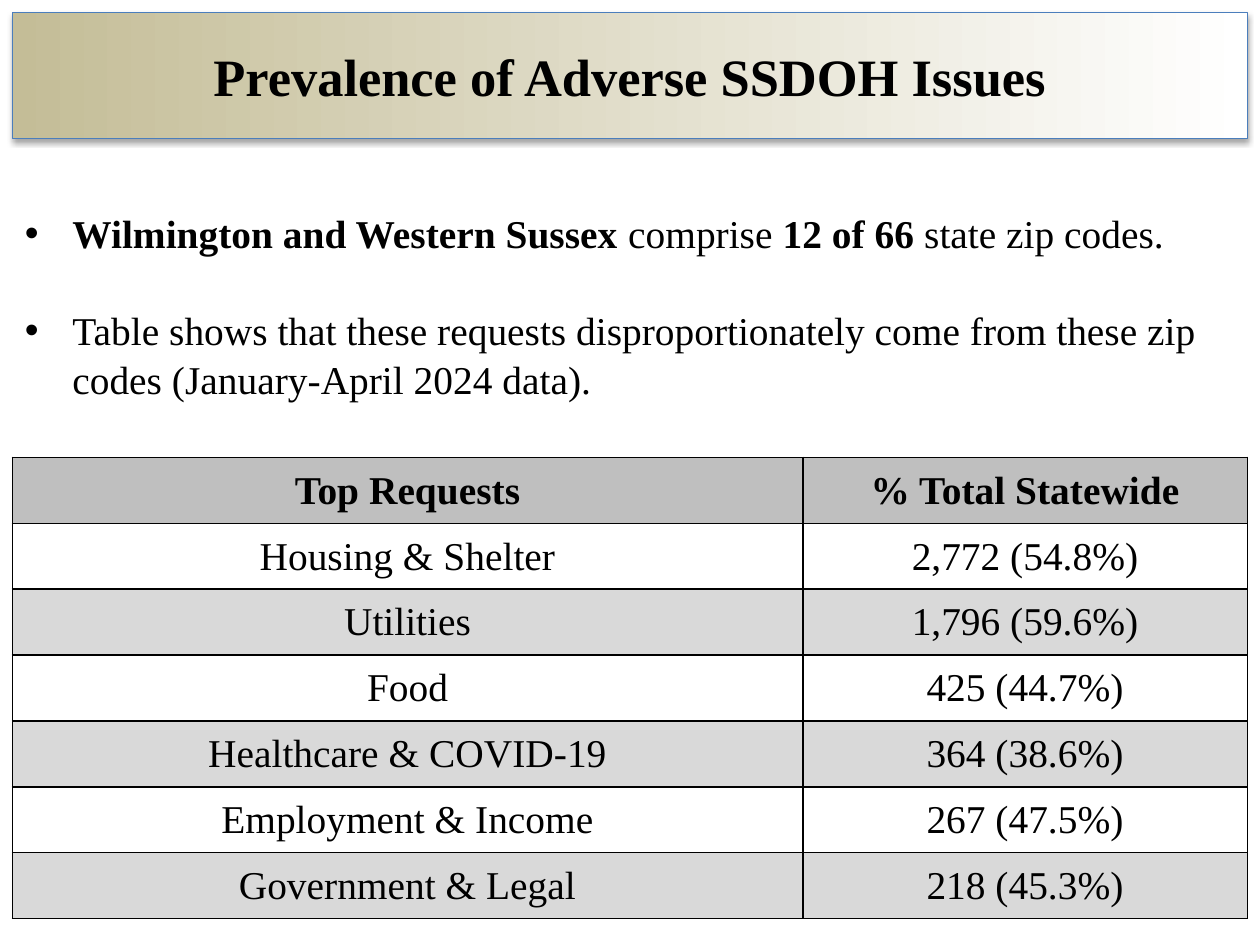
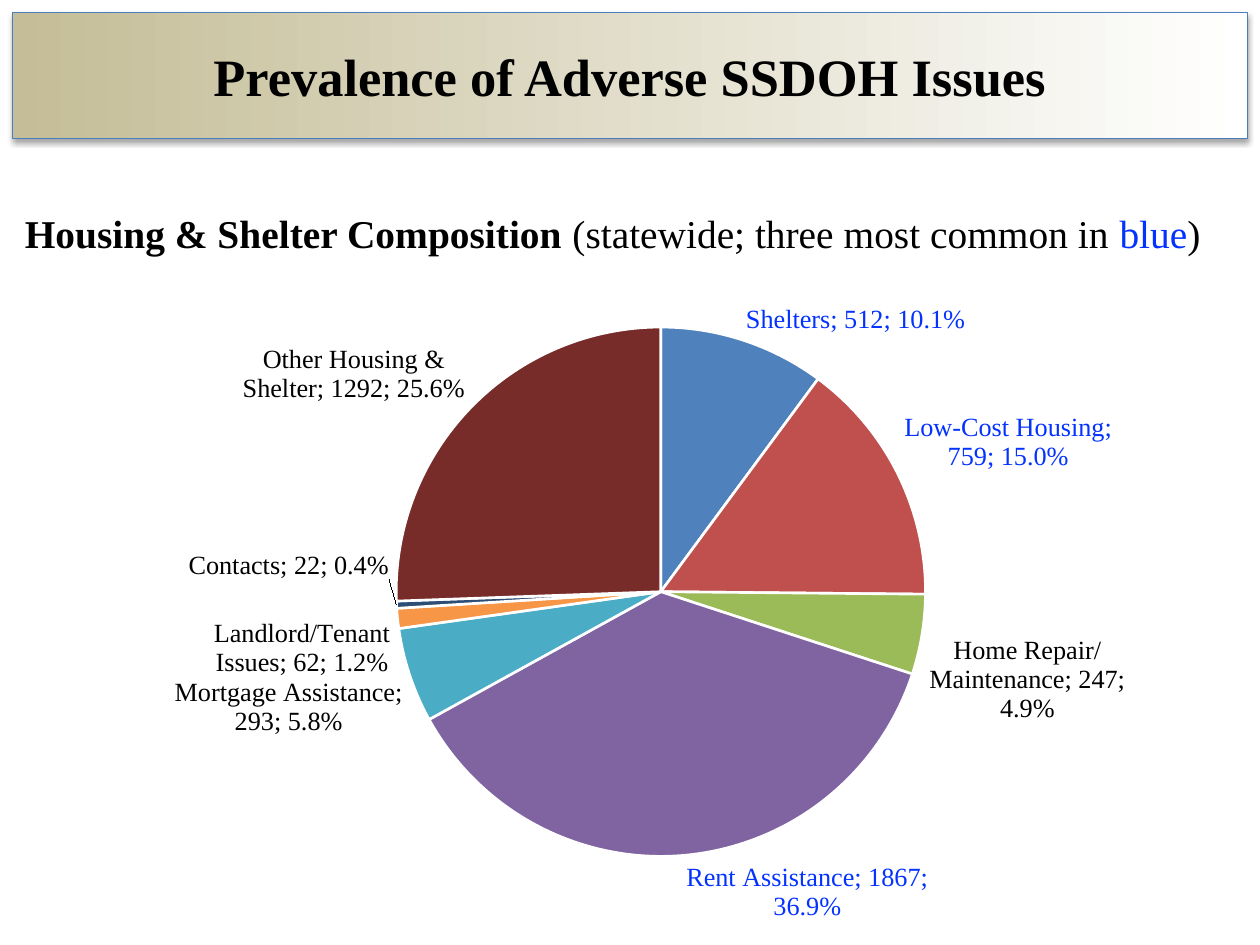
from lxml import etree
from pptx import Presentation
from pptx.chart.data import CategoryChartData
from pptx.dml.color import RGBColor
from pptx.enum.chart import XL_CHART_TYPE, XL_LABEL_POSITION
from pptx.enum.shapes import MSO_SHAPE
from pptx.enum.text import MSO_ANCHOR, PP_ALIGN
from pptx.oxml import parse_xml
from pptx.oxml.ns import nsdecls, qn
from pptx.util import Cm, Pt

RECTANGLE = MSO_SHAPE.RECTANGLE
PIE = XL_CHART_TYPE.PIE
OUTSIDE_END = XL_LABEL_POSITION.OUTSIDE_END
MIDDLE = MSO_ANCHOR.MIDDLE
CENTER = PP_ALIGN.CENTER
LEFT = PP_ALIGN.LEFT

FONT = "Times New Roman"
BLACK, WHITE, BLUE = "000000", "FFFFFF", "0432FF"
SAND, BAND_LINE = "C4BD97", "4B7EBC"
HEADER_GREY, STRIPE_GREY = "BFBFBF", "D9D9D9"
TITLE = "Prevalence of Adverse SSDOH Issues"
TITLE_SIZE, BODY_SIZE, LABEL_SIZE = 30, 22.5, 15
PERCENT_FORMAT = "0.0%"

MARGIN, WIDTH = 0.25, 24.9
BAND_BOX = (MARGIN, MARGIN, WIDTH, 2.54)
BULLETS_BOX = (MARGIN, 4.06, WIDTH, 4.6)
HEADING_BOX = (MARGIN, 4.06, WIDTH, 1.3)
REQUESTS_BOX = (MARGIN, 9.22, WIDTH, 9.3)
HOUSING_BOX = (MARGIN, 5.66, WIDTH, 13.34)

BULLETS = [
    [("Wilmington and Western Sussex", {"bold": True}), (" comprise ", {}),
     ("12 of 66 ", {"bold": True}), ("state zip codes.", {})],
    [("Table shows that these requests disproportionately come from these zip "
      "codes (January-April 2024 data).", {})],
]
HEADING = [
    [("Housing & Shelter Composition ", {"bold": True}),
     ("(statewide; three most common in ", {}), ("blue", {"color": BLUE}), (")", {})],
]
REQUESTS = [
    ("Top Requests", "% Total Statewide"),
    ("Housing & Shelter", "2,772 (54.8%)"),
    ("Utilities", "1,796 (59.6%)"),
    ("Food", "425 (44.7%)"),
    ("Healthcare & COVID-19", "364 (38.6%)"),
    ("Employment & Income", "267 (47.5%)"),
    ("Government & Legal", "218 (45.3%)"),
]
REQUEST_SHARE = 0.64
HOUSING = [
    ("Shelters", 512, "4F81BD"),
    ("Low-Cost Housing", 759, "C0504D"),
    ("Home Repair/Maintenance", 247, "9BBB59"),
    ("Rent Assistance", 1867, "8064A2"),
    ("Mortgage Assistance", 293, "4BACC6"),
    ("Landlord/Tenant Issues", 62, "F79646"),
    ("Contacts", 22, "2C4D75"),
    ("Other Housing & Shelter", 1292, "772C2A"),
]
MOST_COMMON = ("Shelters", "Low-Cost Housing", "Rent Assistance")
RAISED_LABEL = "Contacts"


def rgb(value):
    return RGBColor.from_string(value)


def lengths(box):
    return [Cm(value) for value in box]


def style_font(font, size, color=BLACK, bold=False):
    font.name = FONT
    font.size = Pt(size)
    font.bold = bold
    font.color.rgb = rgb(color)


def write(frame, paragraphs, size=BODY_SIZE, color=BLACK, bold=False,
          align=LEFT, spacing=1.0, gap=0, bullet_indent=0):
    frame.word_wrap = True
    for index, pieces in enumerate(paragraphs):
        paragraph = frame.add_paragraph() if index else frame.paragraphs[0]
        paragraph.alignment = align
        paragraph.line_spacing = spacing
        paragraph.space_before = Pt(gap if index else 0)
        if bullet_indent:
            add_bullet(paragraph, bullet_indent)
        for text, changes in pieces:
            run = paragraph.add_run()
            run.text = text
            style_font(run.font, **{"size": size, "color": color, "bold": bold, **changes})


def add_bullet(paragraph, indent):
    properties = paragraph._p.get_or_add_pPr()
    properties.set("marL", str(Cm(indent)))
    properties.set("indent", str(-Cm(indent)))
    etree.SubElement(properties, qn("a:buFont")).set("typeface", "Arial")
    etree.SubElement(properties, qn("a:buChar")).set("char", "•")


def add_title_band(slide, box):
    band = slide.shapes.add_shape(RECTANGLE, *lengths(box))
    band.fill.gradient()
    band.fill.gradient_angle = 0
    for stop, color in zip(band.fill.gradient_stops, (SAND, WHITE)):
        stop.color.rgb = rgb(color)
    band.line.color.rgb = rgb(BAND_LINE)
    band.line.width = Pt(0.75)
    band.shadow.inherit = False
    band._element.spPr.find(qn("a:effectLst")).append(parse_xml(
        f'<a:outerShdw {nsdecls("a")} blurRad="{Pt(3.1)}" dist="{Pt(1.8)}" '
        f'dir="5400000" rotWithShape="0"><a:srgbClr val="{BLACK}">'
        '<a:alpha val="35000"/></a:srgbClr></a:outerShdw>'))
    band.text_frame.vertical_anchor = MIDDLE
    write(band.text_frame, [[(TITLE, {})]], size=TITLE_SIZE, bold=True, align=CENTER)


def add_body(slide, box, paragraphs, **text_format):
    body = slide.shapes.add_textbox(*lengths(box))
    write(body.text_frame, paragraphs, spacing=1.04, **text_format)


def add_cell_borders(cell):
    properties = cell._tc.get_or_add_tcPr()
    for position, side in enumerate(("lnL", "lnR", "lnT", "lnB")):
        properties.insert(position, parse_xml(
            f'<a:{side} {nsdecls("a")} w="{Pt(1)}"><a:solidFill>'
            f'<a:srgbClr val="{BLACK}"/></a:solidFill></a:{side}>'))


def add_requests_table(slide, box):
    table = slide.shapes.add_table(len(REQUESTS), 2, *lengths(box)).table
    for column, share in zip(table.columns, (REQUEST_SHARE, 1 - REQUEST_SHARE)):
        column.width = Cm(box[2] * share)
    for row, texts in enumerate(REQUESTS):
        table.rows[row].height = Cm(box[3] / len(REQUESTS))
        color = HEADER_GREY if row == 0 else (STRIPE_GREY, WHITE)[row % 2]
        for column, text in enumerate(texts):
            cell = table.cell(row, column)
            cell.fill.solid()
            cell.fill.fore_color.rgb = rgb(color)
            cell.vertical_anchor = MIDDLE
            cell.margin_left = cell.margin_right = cell.margin_top = Cm(0.02)
            cell.margin_bottom = 0
            add_cell_borders(cell)
            write(cell.text_frame, [[(text, {})]], bold=row == 0, align=CENTER)


def manual_layout(x, y, size=None):
    edges = {"xMode": "edge", "yMode": "edge"} if size else {}
    values = {**edges, "x": x, "y": y}
    if size:
        values.update(w=size[0], h=size[1])
    target = '<c:layoutTarget val="inner"/>' if size else ""
    parts = "".join(f'<c:{key} val="{value}"/>' for key, value in values.items())
    return parse_xml(f'<c:layout {nsdecls("c")}><c:manualLayout>{target}{parts}'
                     '</c:manualLayout></c:layout>')


def complete_point_labels(chart, names):
    for label in chart.element.xpath(".//c:dLbl"):
        name = names[int(label.find(qn("c:idx")).get("val"))]
        label.insert(1, parse_xml(
            f'<c:numFmt {nsdecls("c")} formatCode="{PERCENT_FORMAT}" sourceLinked="0"/>'))
        if name == RAISED_LABEL:
            label.insert(1, manual_layout(0, -0.06))
        for part in ("c:showCatName", "c:showPercent"):
            label.find(qn(part)).set("val", "1")


def add_housing_pie(slide, box):
    names, counts, colors = zip(*HOUSING)
    data = CategoryChartData()
    data.categories = names
    data.add_series("Series 1", counts)
    chart = slide.shapes.add_chart(PIE, *lengths(box), data).chart
    chart.has_legend = False
    chart.has_title = False
    style_font(chart.font, LABEL_SIZE)
    plot = chart.plots[0]
    plot.vary_by_categories = True
    series = plot.series[0]

    labels = series.data_labels
    labels.show_category_name = labels.show_value = labels.show_percentage = True
    labels.number_format = PERCENT_FORMAT
    labels.number_format_is_linked = False
    labels.position = OUTSIDE_END
    style_font(labels.font, LABEL_SIZE)

    for index, (name, color) in enumerate(zip(names, colors)):
        point = series.points[index]
        point.format.fill.solid()
        point.format.fill.fore_color.rgb = rgb(color)
        point.format.line.color.rgb = rgb(WHITE)
        point.format.line.width = Pt(1.5)
        if name in MOST_COMMON or name == RAISED_LABEL:
            label = point.data_label
            style_font(label.font, LABEL_SIZE, BLUE if name in MOST_COMMON else BLACK)
            label.position = OUTSIDE_END
    complete_point_labels(chart, names)

    plot_area = chart.element.xpath(".//c:plotArea")[0]
    for layout in plot_area.findall(qn("c:layout")):
        plot_area.remove(layout)
    plot_area.insert(0, manual_layout(0.31, 0.07, (0.43, 0.8)))


def add_slide(deck):
    slide = deck.slides.add_slide(deck.slide_layouts[6])
    add_title_band(slide, BAND_BOX)
    return slide


def build_requests_slide(deck):
    slide = add_slide(deck)
    add_body(slide, BULLETS_BOX, BULLETS, gap=27, bullet_indent=0.96)
    add_requests_table(slide, REQUESTS_BOX)


def build_housing_slide(deck):
    slide = add_slide(deck)
    add_body(slide, HEADING_BOX, HEADING)
    add_housing_pie(slide, HOUSING_BOX)


def main():
    deck = Presentation()
    deck.slide_width, deck.slide_height = Cm(25.4), Cm(19.05)
    build_requests_slide(deck)
    build_housing_slide(deck)
    deck.save("out.pptx")


if __name__ == "__main__":
    main()
